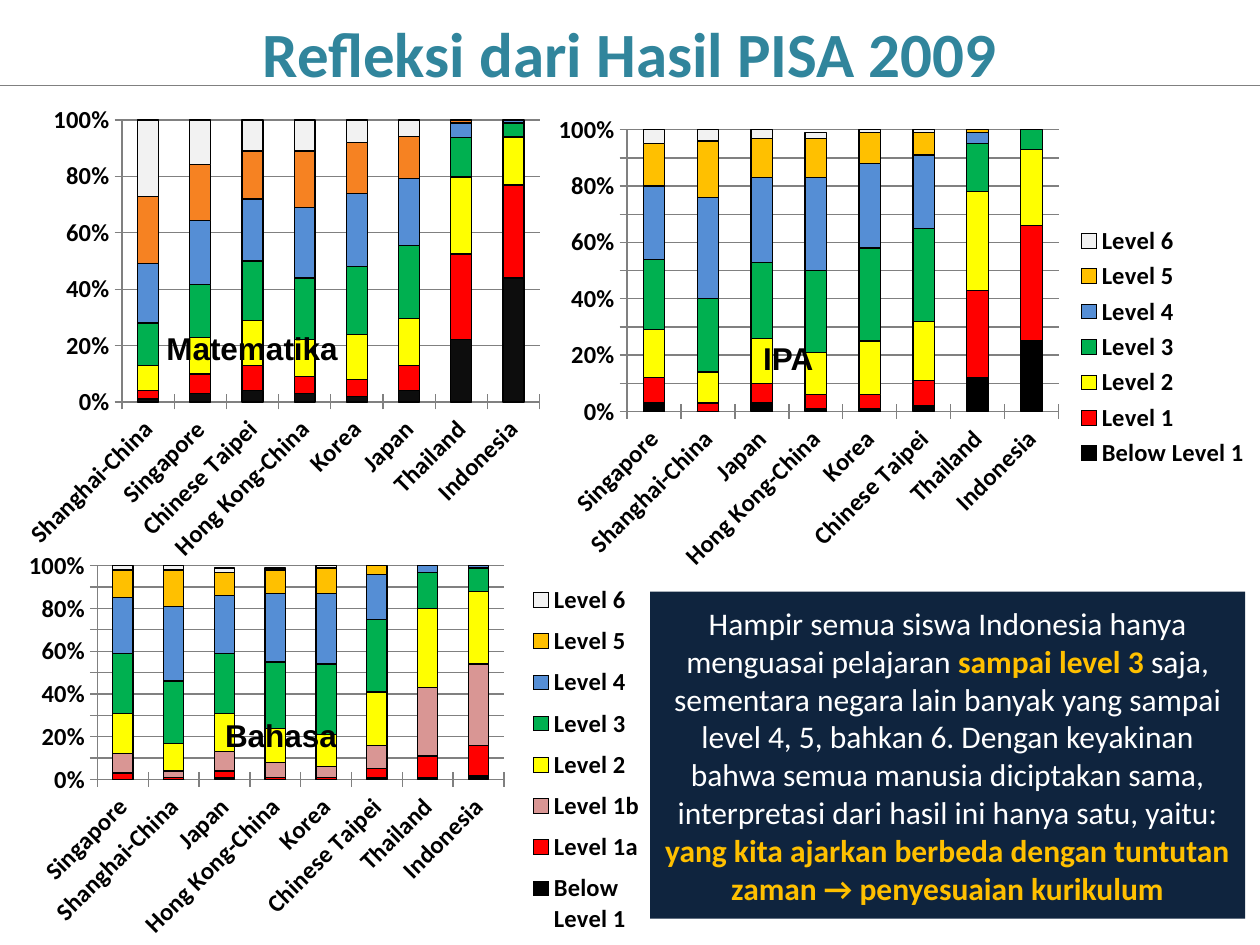
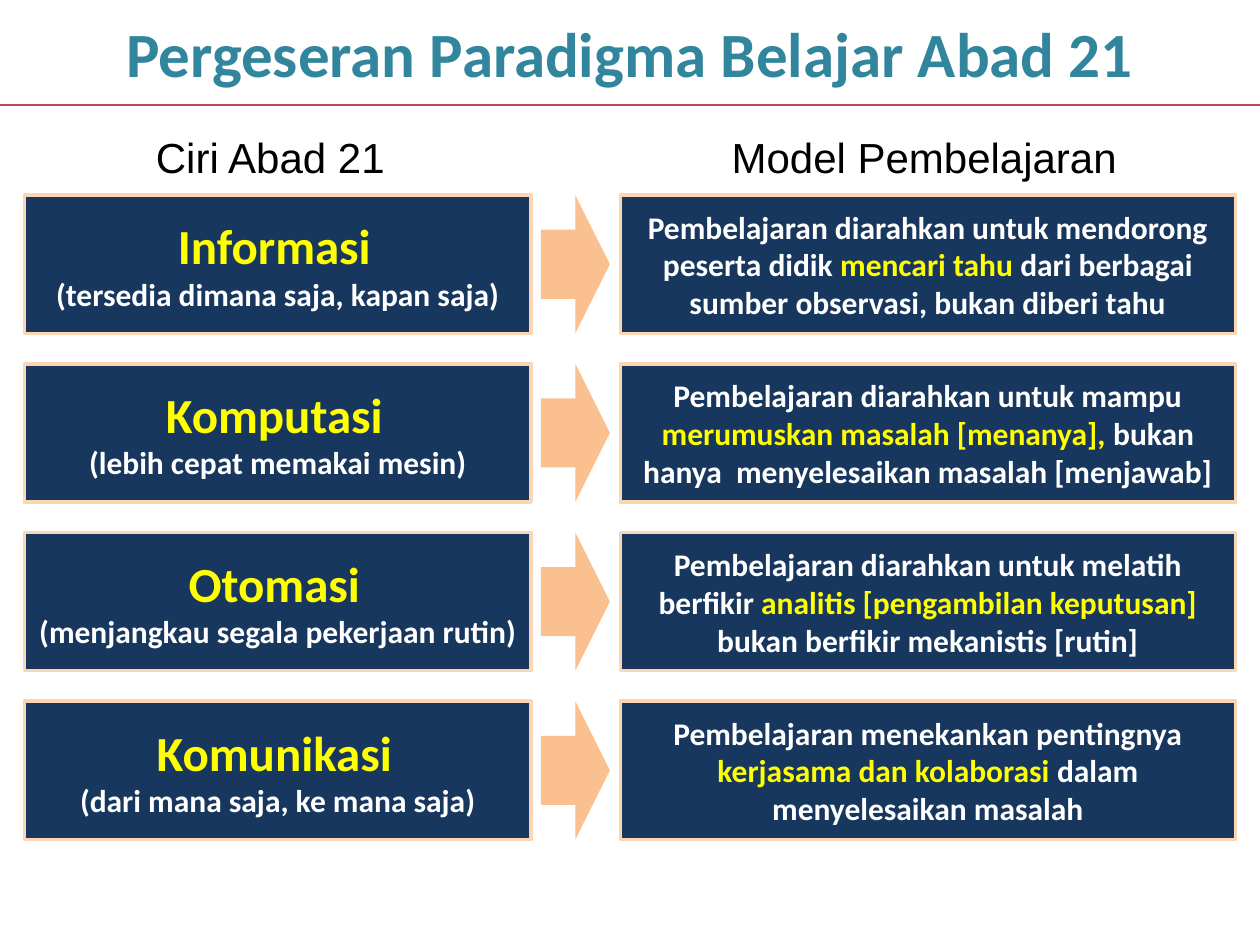
from lxml import etree
from pptx import Presentation
from pptx import util as u
from pptx.chart.data import CategoryChartData
from pptx.dml.color import RGBColor
from pptx.enum import chart as ch, shapes, text
from pptx.oxml import parse_xml
from pptx.oxml.ns import nsdecls, qn

Pt = u.Pt
C = {"title": "31859C", "gray": "808080", "rule": "BF4C48", "ink": "000000", "white": "FFFFFF",
     "note": "0F243E", "box": "17375E", "edge": "FCD5B5", "arrow": "FAC090",
     "yellow": "FFFF00", "gold": "FFC000", "charcoal": "0D0D0D", "red": "FF0000",
     "rose": "D99694", "green": "00B050", "blue": "558ED5", "orange": "F68222", "pale": "F2F2F2"}
RGB = {name: RGBColor.from_string(value) for name, value in C.items()}


def put(sp, paragraphs, face="Calibri", align=text.PP_ALIGN.CENTER, wrap=True):
    tf = sp.text_frame
    tf.word_wrap = wrap
    tf.vertical_anchor = text.MSO_ANCHOR.MIDDLE if wrap else text.MSO_ANCHOR.TOP
    for i, (size, bold, runs) in enumerate(paragraphs):
        p = tf.paragraphs[0] if i == 0 else tf.add_paragraph()
        p.alignment = align
        p.font.name, p.font.size = face, Pt(size)
        if bold is not None:
            p.font.bold = bold
        if len(runs) == 1:
            p.font.color.rgb = RGB[runs[0][1]]
        for words, color, *own in runs:
            r = p.add_run()
            r.text = words
            if len(runs) > 1:
                r.font.color.rgb = RGB[color]
            if bold is None:
                r.font.bold = color == "gold"
            if own:
                r.font.size = Pt(own[0])


def set_layout(parent, index, x, y, w, h, inner=False):
    for old in parent.findall(qn("c:layout")):
        parent.remove(old)
    target = '<c:layoutTarget val="inner"/>' if inner else ""
    parent.insert(index, parse_xml(
        f'<c:layout {nsdecls("c")}><c:manualLayout>{target}'
        '<c:xMode val="edge"/><c:yMode val="edge"/>'
        f'<c:x val="{x}"/><c:y val="{y}"/><c:w val="{w}"/><c:h val="{h}"/>'
        '</c:manualLayout></c:layout>'))


prs = Presentation()
prs.slide_width, prs.slide_height = Pt(720), Pt(540)

slides = []
for title, rule_y, rule_color in (("Refleksi dari Hasil PISA 2009", 49, "gray"),
                                  ("Pergeseran Paradigma Belajar Abad 21", 60, "rule")):
    s = prs.slides.add_slide(prs.slide_layouts[6])
    put(s.shapes.add_textbox(0, 0, Pt(720), Pt(60)), [(36, True, [(title, "title")])])
    rule = s.shapes.add_connector(shapes.MSO_CONNECTOR.STRAIGHT, 0, Pt(rule_y), Pt(720), Pt(rule_y))
    rule.line.color.rgb, rule.line.width = RGB[rule_color], Pt(0.75)
    etree.SubElement(rule._element.spPr, qn("a:effectLst"))
    slides.append(s)

s = slides[0]
by_math = ["Shanghai-China", "Singapore", "Chinese Taipei", "Hong Kong-China",
           "Korea", "Japan", "Thailand", "Indonesia"]
by_reading = ["Singapore", "Shanghai-China", "Japan", "Hong Kong-China",
              "Korea", "Chinese Taipei", "Thailand", "Indonesia"]
math = [("Series 1", "charcoal", (1, 3, 4, 3, 2, 4, 22, 44)),
        ("Series 2", "red", (3, 7, 9, 6, 6, 9, 30, 33)),
        ("Series 3", "yellow", (9, 13, 16, 13, 16, 17, 27, 17)),
        ("Series 4", "green", (15, 19, 21, 22, 24, 26, 14, 5)),
        ("Series 5", "blue", (21, 23, 22, 25, 26, 24, 5, 1)),
        ("Series 6", "orange", (24, 20, 17, 20, 18, 15, 1, 0)),
        ("Series 7", "pale", (27, 16, 11, 11, 8, 6, 0, 0))]
science = [("Below Level 1", "ink", (0.03, 0, 0.03, 0.01, 0.01, 0.02, 0.12, 0.25)),
           ("Level 1", "red", (0.09, 0.03, 0.07, 0.05, 0.05, 0.09, 0.31, 0.41)),
           ("Level 2", "yellow", (0.17, 0.11, 0.16, 0.15, 0.19, 0.21, 0.35, 0.27)),
           ("Level 3", "green", (0.25, 0.26, 0.27, 0.29, 0.33, 0.33, 0.17, 0.07)),
           ("Level 4", "blue", (0.26, 0.36, 0.3, 0.33, 0.3, 0.26, 0.04, 0.01)),
           ("Level 5", "gold", (0.15, 0.2, 0.14, 0.14, 0.11, 0.08, 0.01, 0)),
           ("Level 6", "pale", (0.05, 0.04, 0.03, 0.02, 0.01, 0.01, 0, 0))]
reading = [("Below Level 1", "ink", (0, 0, 0.01, 0, 0, 0.01, 0.01, 0.02)),
           ("Level 1a", "red", (0.03, 0.01, 0.03, 0.01, 0.01, 0.04, 0.1, 0.14)),
           ("Level 1b", "rose", (0.09, 0.03, 0.09, 0.07, 0.05, 0.11, 0.32, 0.38)),
           ("Level 2", "yellow", (0.19, 0.13, 0.18, 0.16, 0.15, 0.25, 0.37, 0.34)),
           ("Level 3", "green", (0.28, 0.29, 0.28, 0.31, 0.33, 0.34, 0.17, 0.11)),
           ("Level 4", "blue", (0.26, 0.35, 0.27, 0.32, 0.33, 0.21, 0.03, 0.01)),
           ("Level 5", "gold", (0.13, 0.17, 0.11, 0.11, 0.12, 0.05, 0, 0)),
           ("Level 6", "pale", (0.03, 0.02, 0.02, 0.01, 0.01, 0, 0, 0))]

STACKED, FULL = ch.XL_CHART_TYPE.COLUMN_STACKED, ch.XL_CHART_TYPE.COLUMN_STACKED_100
charts = [
    (FULL, by_math, math, (8.5, 55, 306, 273), (0.2, 0.05, 0.78, 0.59), None),
    (STACKED, by_reading, science, (309, 60.5, 411, 273), (0.12, 0.05, 0.6, 0.59), (0.74, 0.24, 0.25, 0.53)),
    (STACKED, by_reading, reading, (8.5, 309.5, 363, 230.5), (0.13, 0.06, 0.64, 0.53), (0.8, 0.08, 0.2, 0.92)),
]
for kind, countries, levels, place, plot_area, legend_area in charts:
    data = CategoryChartData()
    data.categories = countries
    for name, _, shares in levels:
        data.add_series(name, shares)
    chart = s.shapes.add_chart(kind, *map(Pt, place), data).chart
    chart.has_title = False
    chart.font.name, chart.font.size, chart.font.bold = "Calibri", Pt(14), True
    chart.font.color.rgb = RGB["ink"]
    plot = chart.plots[0]
    plot.gap_width, plot.overlap, plot.vary_by_categories = 150, 100, False
    for series, (_, color, _) in zip(plot.series, levels):
        series.format.fill.solid()
        series.format.fill.fore_color.rgb = RGB[color]
        series.format.line.color.rgb, series.format.line.width = RGB["ink"], Pt(0.75)

    cat, val = chart.category_axis, chart.value_axis
    val.has_major_gridlines = True
    for line in (cat.format.line, val.format.line, val.major_gridlines.format.line):
        line.color.rgb, line.width = RGB["gray"], Pt(0.75)
    cat.major_tick_mark = val.major_tick_mark = ch.XL_TICK_MARK.CROSS
    cat.tick_labels.font.size = Pt(14)
    cat._element.txPr.find(qn("a:bodyPr")).set("rot", "-2700000")
    val.tick_labels.number_format, val.tick_labels.number_format_is_linked = "0%", False
    if kind == STACKED:
        val.minimum_scale, val.maximum_scale, val.major_unit = 0, 1, 0.1
    set_layout(chart._chartSpace.chart.plotArea, 0, *plot_area, inner=True)

    chart.has_legend = legend_area is not None
    if chart.has_legend:
        chart.legend.position = ch.XL_LEGEND_POSITION.RIGHT
        chart.legend.include_in_layout = False
        set_layout(chart.legend._element, 1, *legend_area)

note = s.shapes.add_shape(shapes.MSO_SHAPE.RECTANGLE, Pt(371.5), Pt(338), Pt(340), Pt(187))
note.shadow.inherit = False
note.fill.solid()
note.fill.fore_color.rgb = RGB["note"]
note.line.fill.background()
put(note, [(18, None, [
    ("Hampir semua siswa Indonesia hanya menguasai pelajaran ", "white"),
    ("sampai level 3 ", "gold"),
    ("saja, sementara negara lain banyak yang sampai level 4, 5, bahkan 6. Dengan keyakinan bahwa "
     "semua manusia diciptakan sama, interpretasi dari hasil ini hanya satu, yaitu: ", "white"),
    ("yang kita ajarkan berbeda dengan tuntutan zaman → penyesuaian kurikulum", "gold")])])

captions = [(slides[0], "Matematika", 18, True, (88, 184.5, 114, 29)),
            (slides[0], "IPA", 18, True, (429, 190, 43, 29)),
            (slides[0], "Bahasa", 18, True, (121.5, 405.5, 79, 29)),
            (slides[1], "Ciri Abad 21", 24, False, (82, 71.5, 147, 36.5)),
            (slides[1], "Model Pembelajaran", 24, False, (411, 71.5, 237.5, 36.5))]
for s, words, size, bold, place in captions:
    put(s.shapes.add_textbox(*map(Pt, place)), [(size, bold, [(words, "ink")])],
        face="Arial", align=text.PP_ALIGN.LEFT, wrap=False)

s = slides[1]
shifts = [
    ("Informasi", "(tersedia dimana saja, kapan saja)",
     "Pembelajaran diarahkan untuk mendorong peserta didik ", "mencari tahu ",
     "dari berbagai sumber observasi, bukan diberi tahu"),
    ("Komputasi", "(lebih cepat memakai mesin)",
     "Pembelajaran diarahkan untuk mampu ", "merumuskan masalah [menanya], ",
     "bukan hanya  menyelesaikan masalah [menjawab]"),
    ("Otomasi", "(menjangkau segala pekerjaan rutin)",
     "Pembelajaran diarahkan untuk melatih berfikir ", "analitis [pengambilan keputusan] ",
     "bukan berfikir mekanistis [rutin]"),
    ("Komunikasi", "(dari mana saja, ke mana saja)",
     "Pembelajaran menekankan pentingnya ", "kerjasama dan kolaborasi",
     " dalam menyelesaikan masalah"),
]
for i, (trait, detail, before, key, after) in enumerate(shifts):
    top = 111.5 + 96.4 * i
    trait_text = [(28, True, [(trait, "yellow"), (" ", "white", 18)]), (18, True, [(detail, "white")])]
    model_text = [(18, True, [(before, "white"), (key, "yellow"), (after, "white")])]
    for preset, left, width, fill, paragraphs in (
            (shapes.MSO_SHAPE.RECTANGLE, 14, 289.5, "box", trait_text),
            (shapes.MSO_SHAPE.RIGHT_ARROW, 309, 39.5, "arrow", None),
            (shapes.MSO_SHAPE.RECTANGLE, 354.5, 351.5, "box", model_text)):
        sp = s.shapes.add_shape(preset, Pt(left), Pt(top), Pt(width), Pt(79))
        sp.shadow.inherit = False
        sp.fill.solid()
        sp.fill.fore_color.rgb = RGB[fill]
        if paragraphs:
            sp.line.color.rgb, sp.line.width = RGB["edge"], Pt(2)
            put(sp, paragraphs)
        else:
            sp.line.fill.background()

prs.save("out.pptx")
